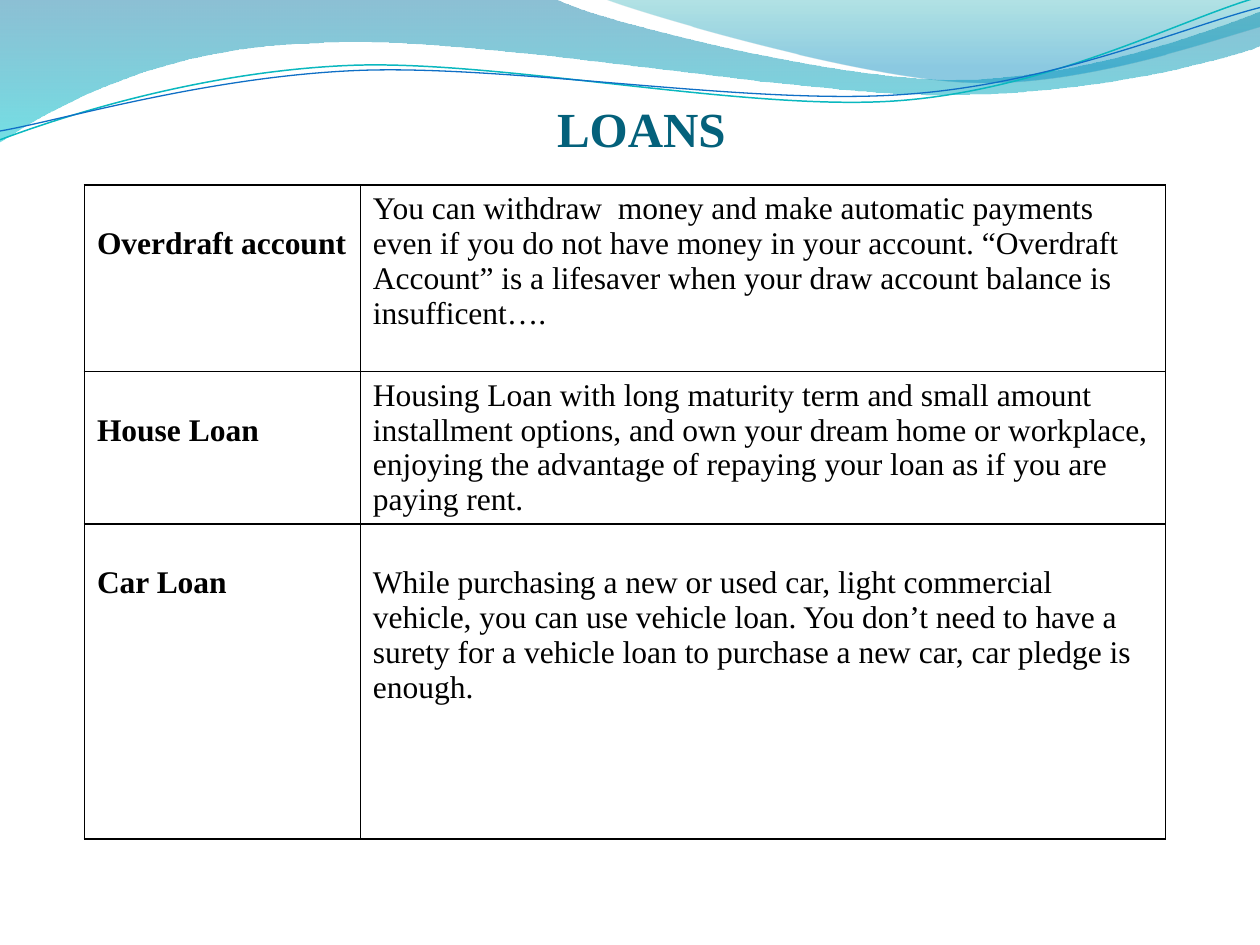
from pptx import Presentation
from pptx import util as u
from pptx.dml.color import RGBColor
from pptx.enum import text
from pptx.oxml import parse_xml
from pptx.oxml.ns import nsdecls, qn

COLORS = {
    "black": "000000", "title": "04617B",
    "ocean": "0074A1", "aqua": "00C6CF",
    "teal": "00A1A9", "sky": "008BBF",
    "teal_line": "0AB8BF", "blue_line": "0F6FC6",
}
FONT = "Times New Roman"
UNITS = 100

LEFT_WAVE = [
    (0, 0), (4.4, -0.01), (4.76, 0.17, 6.64, 0.63, 7.58, 0.63),
    (8.53, 0.63, 9.58, 0.26, 10, 0.09), (10.01, 0.36),
    (9.83, 0.44, 8.7, 0.76, 7.46, 0.75),
    (6.22, 0.75, 3.82, 0.28, 2.57, 0.34),
    (1.29, 0.36, 0.46, 0.83, -0.01, 1.13),
]
RIGHT_WAVE = [
    (4.79, -0.01), (5.09, 0.11, 6.82, 0.62, 7.69, 0.65),
    (8.56, 0.69, 9.61, 0.32, 10, 0.21), (10, 0),
]
TEAL_STRAND = [
    (0, 1.11), (0.48, 0.93, 1.58, 0.57, 2.77, 0.52),
    (3.95, 0.47, 5.93, 0.89, 7.13, 0.8),
    (8.33, 0.71, 9.38, 0.15, 9.98, -0.02),
]
BLUE_STRAND = [
    (0, 1.04), (0.47, 0.96, 1.64, 0.61, 2.83, 0.56),
    (4.03, 0.51, 5.97, 0.84, 7.17, 0.75),
    (8.36, 0.67, 9.41, 0.21, 10, 0.06),
]

LOANS = [
    ("Overdraft account",
     "You can withdraw  money and make automatic payments even if you do not "
     "have money in your account. “Overdraft Account” is a lifesaver when your "
     "draw account balance is insufficent….", 1.48),
    ("House Loan",
     "Housing Loan with long maturity term and small amount installment options, "
     "and own your dream home or workplace, enjoying the advantage of repaying "
     "your loan as if you are paying rent.", 1.2),
    ("Car Loan",
     "While purchasing a new or used car, light commercial vehicle, you can use "
     "vehicle loan. You don’t need to have a surety for a vehicle loan to "
     "purchase a new car, car pledge is enough.", 2.5),
]
COLUMN_WIDTHS = (2.19, 6.39)
TOP_MARGIN, LOWERED_MARGIN = 0.05, 0.33


def color(name):
    return RGBColor.from_string(COLORS[name])


def write(frame, words, size=18, bold=False, ink="black", align=None, spacing=None):
    para = frame.paragraphs[0]
    para.alignment = align
    para.line_spacing = spacing
    span = para.add_run()
    span.text = words
    span.font.name = FONT
    span.font.size = u.Pt(size)
    span.font.bold = bold
    span.font.color.rgb = color(ink)


class LoanSlide:
    """Hold the style and the current slide, and add its elements."""

    def __init__(self, deck):
        self.page = deck.slides.add_slide(deck.slide_layouts[5])
        self.shapes = self.page.shapes

    def outline(self, steps, close):
        steps = [[round(value * UNITS) for value in step] for step in steps]
        anchors = [step[-2:] for step in steps]
        left, top = map(min, zip(*anchors))
        builder = self.shapes.build_freeform(*anchors[0], scale=u.Inches(1) / UNITS)
        builder.add_line_segments(anchors[1:], close=close)
        shape = builder.convert_to_shape()
        shape.shadow.inherit = False
        lines = list(shape._element.iter(qn("a:lnTo")))
        for line, step in zip(lines, steps[1:]):
            if len(step) == 6:
                points = "".join(f'<a:pt x="{x - left}" y="{y - top}"/>'
                                 for x, y in zip(step[::2], step[1::2]))
                curve = parse_xml(
                    f'<a:cubicBezTo {nsdecls("a")}>{points}</a:cubicBezTo>')
                line.getparent().replace(line, curve)
        return shape

    def wave(self, steps, stops):
        shape = self.outline(steps, True)
        shape.line.fill.background()
        shape.fill.gradient()
        shape.fill.gradient_angle = 270
        for stop, (position, ink, _) in zip(shape.fill.gradient_stops, stops):
            stop.position = position
            stop.color.rgb = color(ink)
        gradient = shape._element.spPr.find(qn("a:gradFill"))
        for node, (_, _, opacity) in zip(gradient.iter(qn("a:srgbClr")), stops):
            node.append(parse_xml(f'<a:alpha {nsdecls("a")} val="{opacity * 1000}"/>'))

    def strand(self, steps, ink, width):
        shape = self.outline(steps, False)
        shape.fill.background()
        shape.line.color.rgb = color(ink)
        shape.line.width = u.Pt(width)

    def title(self, words):
        box = self.shapes.title
        self.shapes._spTree.append(box._element)
        box.left, box.top, box.width, box.height = map(u.Inches, (0.59, 0, 9, 1.25))
        frame = box.text_frame
        frame.auto_size = text.MSO_AUTO_SIZE.NONE
        frame.vertical_anchor = text.MSO_ANCHOR.BOTTOM
        frame.margin_left = frame.margin_right = frame.margin_bottom = 0
        write(frame, words, size=28, bold=True, ink="title",
              align=text.PP_ALIGN.CENTER, spacing=1.5)

    def cell(self, cell, words, bold, margin):
        cell.margin_top = u.Inches(margin)
        properties = cell._tc.get_or_add_tcPr()
        for side in "LRTB":
            properties.append(parse_xml(
                f'<a:ln{side} {nsdecls("a")} w="12700"><a:solidFill>'
                f'<a:srgbClr val="{COLORS["black"]}"/></a:solidFill></a:ln{side}>'))
        cell.fill.background()
        write(cell.text_frame, words, bold=bold)

    def table(self, rows):
        height = sum(row[2] for row in rows)
        table = self.shapes.add_table(
            len(rows), len(COLUMN_WIDTHS), u.Inches(0.67), u.Inches(1.47),
            u.Inches(sum(COLUMN_WIDTHS)), u.Inches(height)).table
        table.first_row = table.horz_banding = False
        for column, width in zip(table.columns, COLUMN_WIDTHS):
            column.width = u.Inches(width)
        for index, (name, details, height) in enumerate(rows):
            table.rows[index].height = u.Inches(height)
            last = index == len(rows) - 1
            self.cell(table.cell(index, 0), name, True, LOWERED_MARGIN)
            self.cell(table.cell(index, 1), details, False,
                      LOWERED_MARGIN if last else TOP_MARGIN)


def main():
    deck = Presentation()
    deck.slide_width, deck.slide_height = u.Inches(10), u.Inches(7.5)
    slide = LoanSlide(deck)
    slide.wave(LEFT_WAVE, [(0, "ocean", 45), (1, "aqua", 55)])
    slide.wave(RIGHT_WAVE, [(0, "teal", 30), (0.8, "sky", 45)])
    slide.strand(TEAL_STRAND, "teal_line", 0.85)
    slide.strand(BLUE_STRAND, "blue_line", 0.75)
    slide.title("LOANS")
    slide.table(LOANS)
    deck.save("out.pptx")


if __name__ == "__main__":
    main()
